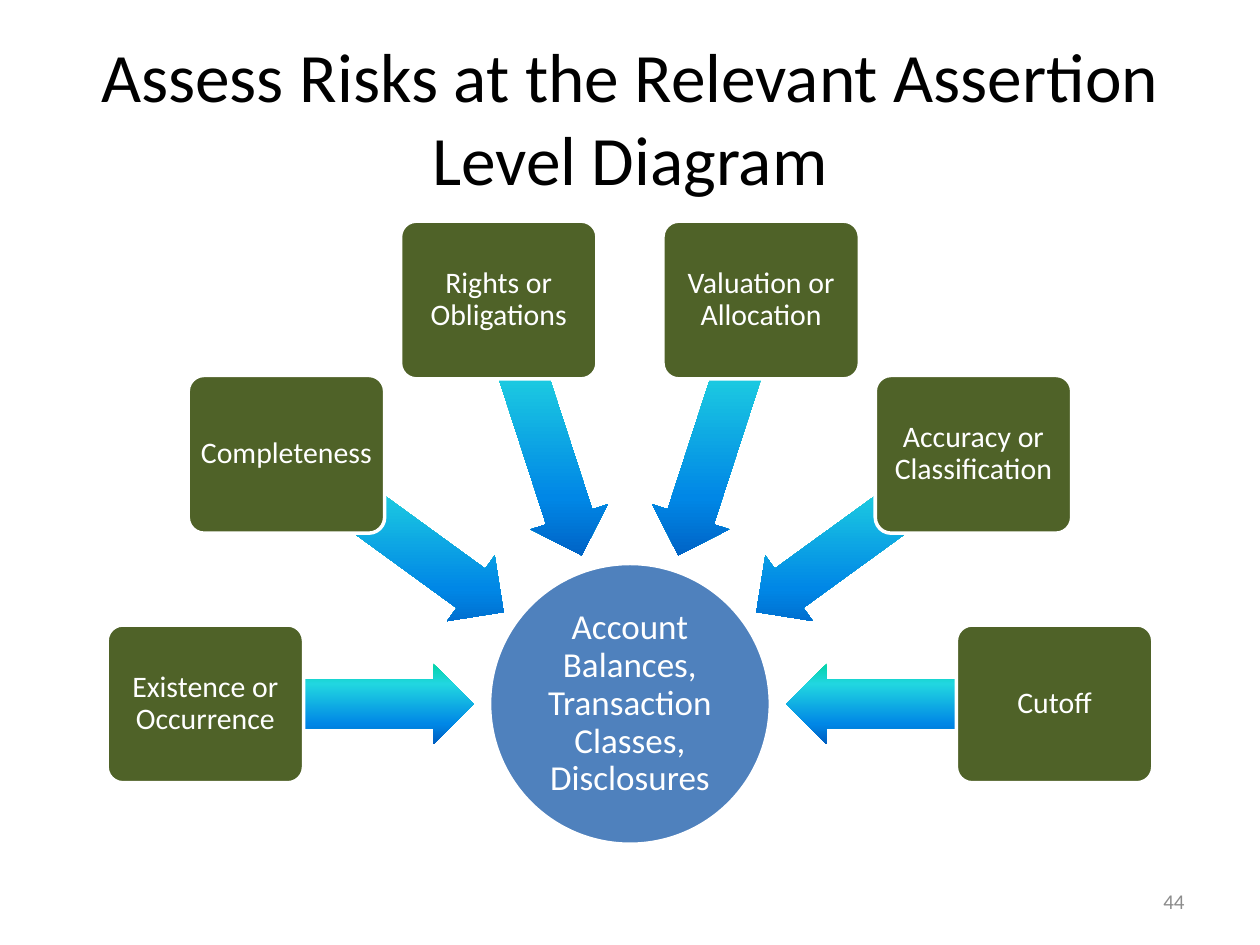
from math import cos, radians, sin

from pptx import Presentation
from pptx.dml.color import RGBColor
from pptx.enum.shapes import MSO_SHAPE as SHAPE
from pptx.enum.text import MSO_ANCHOR as ANCHOR, MSO_AUTO_SIZE as AUTO, PP_ALIGN as ALIGN
from pptx.oxml import parse_xml
from pptx.oxml.ns import nsdecls, qn
from pptx.util import Cm, Pt

COLORS = {"white": "FFFFFF", "black": "000000", "blue": "4F81BD", "green": "4F6228", "gray": "8C8C8C"}
STOPS = [(0, "03D4A8"), (25, "21D6E0"), (75, "0087E6"), (100, "005CBF")]
ASSERTIONS = ["Existence or Occurrence", "Completeness", "Rights or Obligations",
              "Valuation or Allocation", "Accuracy or Classification", "Cutoff"]
HUB_X, HUB_Y, HUB_SIZE = 12.7, 14.19, 5.66
ARROW_R, ARROW_W, ARROW_H = 5.87, 5.44, 1.63
BOX_R, BOX_W, BOX_H = 8.56, 3.96, 3.18


def write(s, text, size, color="white", align=ALIGN.CENTER, inset=None, spacing=None):
    tf = s.text_frame
    tf.word_wrap = True
    tf.auto_size = AUTO.NONE
    tf.vertical_anchor = ANCHOR.MIDDLE
    if inset is not None:
        tf.margin_left = tf.margin_right = tf.margin_top = tf.margin_bottom = Cm(inset)
    p = tf.paragraphs[0]
    p.alignment = align
    p.line_spacing = spacing
    r = p.add_run()
    r.text = text
    r.font.name = "Calibri"
    r.font.size = Pt(size)
    r.font.color.rgb = RGBColor.from_string(COLORS[color])


def add_centred(kind, x, y, w, h, fill=None):
    s = sl.shapes.add_shape(kind, Cm(x - w / 2), Cm(y - h / 2), Cm(w), Cm(h))
    s.shadow.inherit = False
    if fill:
        s.fill.solid()
        s.fill.fore_color.rgb = RGBColor.from_string(COLORS[fill])
        s.line.color.rgb = RGBColor.from_string(COLORS["white"])
        s.line.width = Pt(2)
    else:
        s.fill.background()
        s.line.fill.background()
    return s


prs = Presentation()
prs.slide_width, prs.slide_height = Cm(25.4), Cm(19.05)
sl = prs.slides.add_slide(prs.slide_layouts[5])

title = sl.shapes.title
title.left, title.top, title.width, title.height = Cm(1.27), Cm(0.76), Cm(22.86), Cm(3.18)
write(title, "Assess Risks at the Relevant Assertion Level Diagram", 39.6, color="black")

hub = add_centred(SHAPE.OVAL, HUB_X, HUB_Y, HUB_SIZE, HUB_SIZE, fill="blue")
write(hub, "Account Balances, Transaction Classes, Disclosures", 20, inset=0.03, spacing=0.9)

stops = "".join(f'<a:gs pos="{pos * 1000}"><a:srgbClr val="{rgb}"/></a:gs>' for pos, rgb in STOPS)
gradient = (f'<a:gradFill {nsdecls("a")} rotWithShape="0"><a:gsLst>{stops}</a:gsLst>'
            '<a:lin ang="5400000" scaled="0"/></a:gradFill>')

for i, name in enumerate(ASSERTIONS):
    angle = 180 + 36 * i
    dx, dy = cos(radians(angle)), sin(radians(angle))

    arrow = add_centred(SHAPE.LEFT_ARROW, HUB_X + ARROW_R * dx, HUB_Y + ARROW_R * dy, ARROW_W, ARROW_H)
    arrow.rotation = angle % 360
    arrow.adjustments[0], arrow.adjustments[1] = 0.6, 0.5
    sp_pr = arrow.element.spPr
    sp_pr.replace(sp_pr.find(qn("a:noFill")), parse_xml(gradient))

    box = add_centred(SHAPE.ROUNDED_RECTANGLE, HUB_X + BOX_R * dx, HUB_Y + BOX_R * dy, BOX_W, BOX_H, fill="green")
    box.adjustments[0] = 0.1
    write(box, name, 17, inset=0.1, spacing=0.9)

number = sl.shapes.add_textbox(Cm(18.2), Cm(17.66), Cm(5.93), Cm(1.01))
write(number, "44", 12, color="gray", align=ALIGN.RIGHT)

prs.save("out.pptx")
